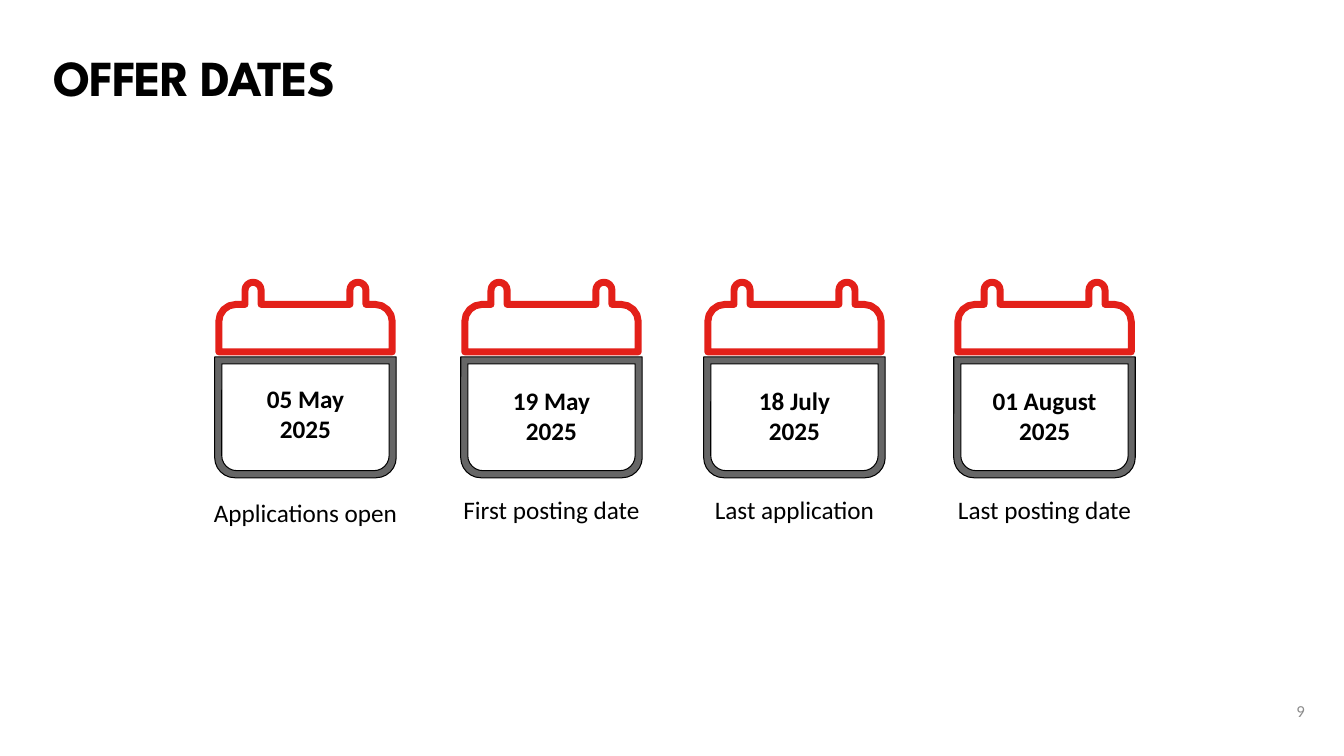
"""Build the offer dates slide: four calendar icons with dates and captions."""
import math

import lxml.etree
import pptx
import pptx.dml.color
import pptx.enum.shapes
import pptx.enum.text
import pptx.oxml.ns
import pptx.util

Inches = pptx.util.Inches
Pt = pptx.util.Pt
RGB = pptx.dml.color.RGBColor.from_string
Align = pptx.enum.text.PP_ALIGN
qn = pptx.oxml.ns.qn


class Theme:
    red = RGB("E32019")
    grey = RGB("666666")
    white = RGB("FFFFFF")
    black = RGB("000000")
    pale = RGB("8C8C8C")
    title_font = "League Spartan"
    body_font = "Calibri"
    title_size = Pt(36)
    body_size = Pt(18)
    number_size = Pt(12)


ICON_WIDTH = 1.8
HEADER_TOP = 2.76
BODY_TOP = 3.54
BODY_HEIGHT = 1.2
CAPTION_WIDTH = 2.04
DATE_WIDTH = 1.24
ARC_STEPS = 4

HEADER_HALF = [(0.04, 0.73, 0), (0.04, 0.26, 0.17), (0.3, 0.26, 0),
               (0.3, 0.04, 0.08), (0.46, 0.04, 0.08), (0.46, 0.26, 0)]
HEADER_CORNERS = HEADER_HALF + [(ICON_WIDTH - x, y, radius)
                                for x, y, radius in reversed(HEADER_HALF)]
BODY_LAYERS = [(0, 0.2, Theme.grey), (0.07, 0.15, Theme.white)]
CALENDARS = [
    (2.13, "05 May\n2025", 3.75, "Applications open", 4.88),
    (4.57, "19 May\n2025", 3.77, "First posting date", 4.85),
    (6.98, "18 July\n2025", 3.77, "Last application", 4.85),
    (9.46, "01 August\n2025", 3.77, "Last posting date", 4.85),
]

presentation = pptx.Presentation()
presentation.slide_width = Inches(13.33)
presentation.slide_height = Inches(7.5)
slide = presentation.slides.add_slide(presentation.slide_layouts[6])


def rounded_outline(corners, left, top):
    """Return the points of an outline whose corners are rounded."""
    points = []
    for index, (x, y, radius) in enumerate(corners):
        offsets = []
        for near_x, near_y, _ in (corners[index - 1], corners[(index + 1) % len(corners)]):
            distance = math.hypot(near_x - x, near_y - y)
            offsets.append(((near_x - x) * radius / distance, (near_y - y) * radius / distance))
        (back_x, back_y), (ahead_x, ahead_y) = offsets
        for step in range(ARC_STEPS + 1 if radius else 1):
            angle = math.pi / 2 * step / ARC_STEPS
            back, ahead = 1 - math.sin(angle), 1 - math.cos(angle)
            points.append((Inches(left + x + back_x * back + ahead_x * ahead),
                           Inches(top + y + back_y * back + ahead_y * ahead)))
    return points


def add_text(text, left, top, width, height, size, color, font=Theme.body_font,
             bold=False, align=Align.CENTER, wrap=False):
    """Add a text box with one format throughout and return it."""
    box = slide.shapes.add_textbox(Inches(left), Inches(top), Inches(width), Inches(height))
    box.text_frame.word_wrap = wrap
    box.text_frame.text = text
    for paragraph in box.text_frame.paragraphs:
        paragraph.alignment = align
        for run in paragraph.runs:
            run.font.name = font
            run.font.size = size
            run.font.bold = bold
            run.font.color.rgb = color
    return box


title = add_text("OFFER DATES", 0.53, 0.45, 11.01, 0.52, Theme.title_size, Theme.black,
                 font=Theme.title_font, bold=True, align=Align.LEFT, wrap=True)
title_frame = title.text_frame
title_frame.margin_left = title_frame.margin_right = 0
title_frame.margin_top = title_frame.margin_bottom = 0
title_frame.paragraphs[0].line_spacing = Pt(44)
title_frame.paragraphs[0].runs[0].font._element.set("spc", "-100")

for left, date, date_top, caption, caption_top in CALENDARS:
    header_points = rounded_outline(HEADER_CORNERS, left, HEADER_TOP)
    builder = slide.shapes.build_freeform(*header_points[0])
    builder.add_line_segments(header_points[1:], close=True)
    header = builder.convert_to_shape()
    header.shadow.inherit = False
    header.fill.background()
    header.line.color.rgb = Theme.red
    header.line.width = Pt(5)
    lxml.etree.SubElement(header._element.spPr.find(qn("a:ln")), qn("a:round"))

    for inset, radius, color in BODY_LAYERS:
        width, height = ICON_WIDTH - 2 * inset, BODY_HEIGHT - 2 * inset
        body = slide.shapes.add_shape(
            pptx.enum.shapes.MSO_SHAPE.ROUND_2_SAME_RECTANGLE,
            Inches(left + inset), Inches(BODY_TOP + inset), Inches(width), Inches(height))
        body.adjustments[0] = 0
        body.adjustments[1] = radius / height
        body.shadow.inherit = False
        body.fill.solid()
        body.fill.fore_color.rgb = color
        body.line.color.rgb = Theme.black
        body.line.width = Pt(0.75)

    center = left + ICON_WIDTH / 2
    add_text(date, center - DATE_WIDTH / 2, date_top, DATE_WIDTH, 0.71,
             Theme.body_size, Theme.black, bold=True)
    add_text(caption, center - CAPTION_WIDTH / 2, caption_top, CAPTION_WIDTH, 0.4,
             Theme.body_size, Theme.black)

number = add_text("9", 12.63, 6.85, 0.41, 0.4, Theme.number_size, Theme.pale,
                  align=Align.RIGHT, wrap=True)
number.text_frame.vertical_anchor = pptx.enum.text.MSO_ANCHOR.MIDDLE

presentation.save("out.pptx")
